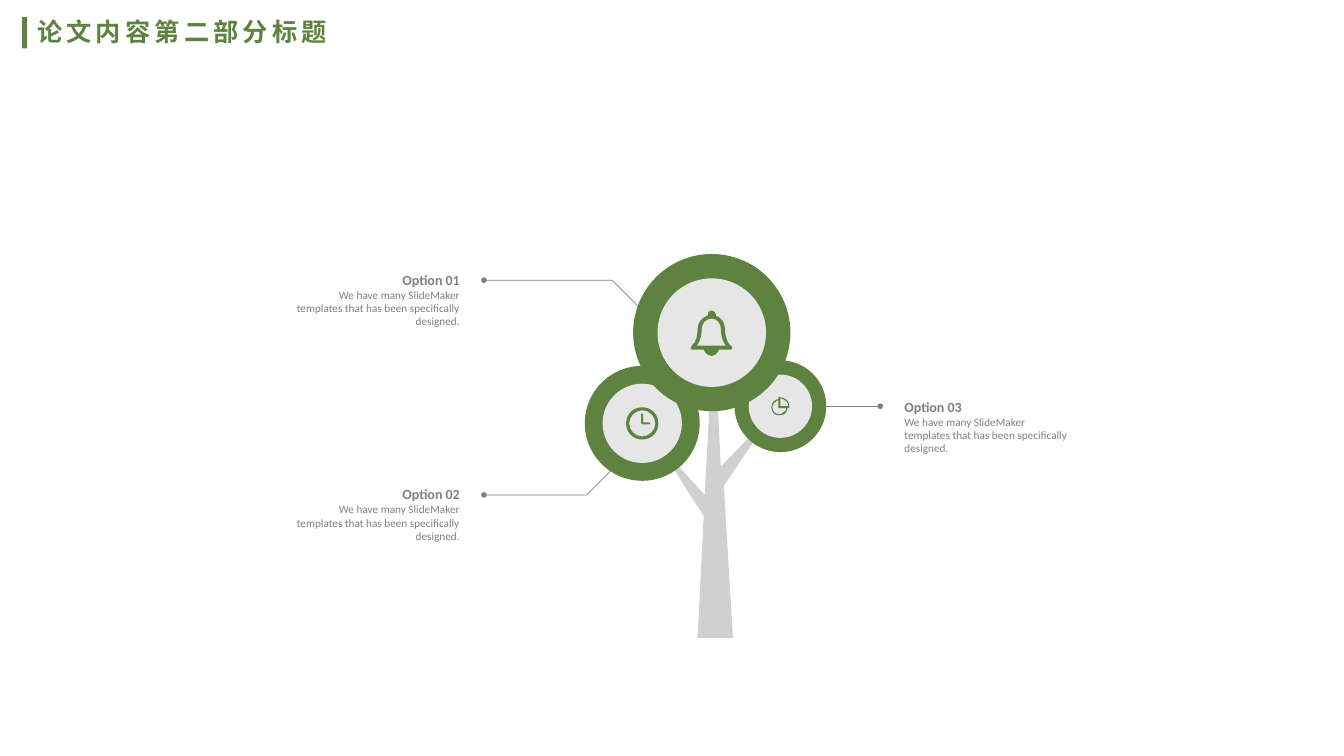
from dataclasses import dataclass

from lxml import etree
from pptx import Presentation, util as u
from pptx.dml import color
from pptx.enum import shapes, text
from pptx.oxml import ns

# A step is a point (x, y) or a Bezier curve (x1, y1, x2, y2, x, y).
Contour = list[tuple[float, ...]]


@dataclass(frozen=True)
class Theme:
    green: color.RGBColor = color.RGBColor(0x5E, 0x82, 0x40)
    pale: color.RGBColor = color.RGBColor(0xE7, 0xE6, 0xE6)
    gray: color.RGBColor = color.RGBColor(0x80, 0x80, 0x80)
    trunk: color.RGBColor = color.RGBColor(0x18, 0x17, 0x17)
    trunk_opacity: int = 20
    font: str = "Calibri"
    title_size: int = 18
    heading_size: int = 10
    body_size: int = 8
    line_width: float = 0.5


@dataclass(frozen=True)
class Option:
    heading: str
    left: float
    top: float
    align: text.PP_ALIGN


@dataclass(frozen=True)
class Crown:
    x: float
    y: float
    diameter: float


THEME = Theme()
RING_RATIO = 0.69
BODY = "We have many SlideMaker templates that has been specifically designed."
OPTIONS = [
    Option("Option 02", 2.91, 4.82, text.PP_ALIGN.RIGHT),
    Option("Option 01", 2.91, 2.69, text.PP_ALIGN.RIGHT),
    Option("Option 03", 8.97, 3.95, text.PP_ALIGN.LEFT),
]
LEADERS: list[Contour] = [
    [(6.37, 3.08), (6.07, 2.78), (4.8, 2.78)],
    [(6.1, 4.63), (5.82, 4.91), (4.8, 4.91)],
]
TRUNK: Contour = [
    (6.92, 6.33), (7.27, 6.33), (7.18, 4.82), (7.67, 4.09), (7.15, 4.63),
    (7.08, 3.24), (6.99, 4.91), (6.51, 4.38), (6.98, 5.12),
]
CROWNS = [Crown(7.74, 4.03, 0.91), Crown(6.37, 4.2, 1.14), Crown(7.06, 3.3, 1.56)]
PIE: list[Contour] = [
    [(7.83, 4.04), (7.83, 3.98, 7.79, 3.94, 7.73, 3.94), (7.72, 3.94),
     (7.72, 3.96), (7.68, 3.96, 7.65, 4, 7.65, 4.04),
     (7.65, 4.09, 7.68, 4.12, 7.73, 4.12),
     (7.75, 4.12, 7.76, 4.12, 7.78, 4.11),
     (7.8, 4.09, 7.81, 4.07, 7.81, 4.05), (7.83, 4.05)],
    [(7.77, 4.09), (7.76, 4.1, 7.74, 4.11, 7.73, 4.11),
     (7.69, 4.11, 7.66, 4.08, 7.66, 4.04),
     (7.66, 4.01, 7.69, 3.98, 7.72, 3.97), (7.72, 4.05), (7.8, 4.05),
     (7.8, 4.07, 7.79, 4.08, 7.77, 4.09)],
    [(7.74, 4.03), (7.74, 3.95), (7.78, 3.96, 7.82, 3.99, 7.82, 4.03)],
]
BELL: list[Contour] = [
    [(7.25, 3.43), (7.19, 3.39, 7.19, 3.26, 7.19, 3.26),
     (7.19, 3.2, 7.15, 3.15, 7.1, 3.13), (7.1, 3.12),
     (7.1, 3.1, 7.08, 3.08, 7.06, 3.08),
     (7.03, 3.08, 7.02, 3.1, 7.02, 3.12), (7.02, 3.13),
     (6.96, 3.15, 6.92, 3.2, 6.92, 3.26),
     (6.92, 3.3, 6.91, 3.4, 6.86, 3.43),
     (6.85, 3.44, 6.85, 3.45, 6.85, 3.46),
     (6.85, 3.46, 6.86, 3.47, 6.87, 3.47), (6.98, 3.47),
     (6.99, 3.5, 7.02, 3.53, 7.06, 3.53),
     (7.09, 3.53, 7.12, 3.5, 7.13, 3.47), (7.24, 3.47),
     (7.25, 3.47, 7.26, 3.46, 7.26, 3.46),
     (7.27, 3.45, 7.26, 3.44, 7.25, 3.43)],
    [(6.91, 3.43), (6.96, 3.37, 6.96, 3.27, 6.96, 3.26),
     (6.96, 3.21, 7, 3.16, 7.06, 3.16),
     (7.11, 3.16, 7.15, 3.21, 7.15, 3.26),
     (7.15, 3.27, 7.15, 3.37, 7.2, 3.43)],
]
CLOCK_RING: list[Contour] = [
    [(6.37, 4.36), (6.28, 4.36, 6.21, 4.29, 6.21, 4.2),
     (6.21, 4.11, 6.28, 4.04, 6.37, 4.04),
     (6.46, 4.04, 6.53, 4.11, 6.53, 4.2),
     (6.53, 4.29, 6.46, 4.36, 6.37, 4.36)],
    [(6.37, 4.07), (6.3, 4.07, 6.24, 4.13, 6.24, 4.2),
     (6.24, 4.27, 6.3, 4.33, 6.37, 4.33),
     (6.44, 4.33, 6.5, 4.27, 6.5, 4.2),
     (6.5, 4.13, 6.44, 4.07, 6.37, 4.07)],
]
CLOCK_HANDS: list[Contour] = [
    [(6.44, 4.21), (6.37, 4.21), (6.36, 4.21, 6.36, 4.21, 6.36, 4.2),
     (6.36, 4.11), (6.36, 4.11, 6.36, 4.1, 6.37, 4.1),
     (6.38, 4.1, 6.38, 4.11, 6.38, 4.11), (6.38, 4.19), (6.44, 4.19),
     (6.45, 4.19, 6.45, 4.19, 6.45, 4.2),
     (6.45, 4.21, 6.45, 4.21, 6.44, 4.21)],
]


def paint(shape, fill: color.RGBColor) -> None:
    shape.shadow.inherit = False
    shape.fill.solid()
    shape.fill.fore_color.rgb = fill
    shape.line.fill.background()


def add_preset(slide, kind, left: float, top: float, width: float,
               height: float, fill: color.RGBColor) -> None:
    box = map(u.Inches, (left, top, width, height))
    paint(slide.shapes.add_shape(kind, *box), fill)


def trace(slide, contours: list[Contour], close: bool = True):
    """Build a freeform, then bend each run of three control points into a curve."""
    builder = None
    for start, *steps in contours:
        corner = [u.Inches(value) for value in start]
        if builder is None:
            builder = slide.shapes.build_freeform(*corner)
        else:
            builder.move_to(*corner)
        points = [(u.Inches(step[i]), u.Inches(step[i + 1]))
                  for step in steps for i in range(0, len(step), 2)]
        builder.add_line_segments(points, close=close)
    outline = builder.convert_to_shape()
    segments = iter(outline._element.findall(".//" + ns.qn("a:lnTo")))
    for _, *steps in contours:
        for step in steps:
            segment = next(segments)
            if len(step) == 6:
                segment.tag = ns.qn("a:cubicBezTo")
                for _ in range(2):
                    control = next(segments)
                    segment.append(control[0])
                    control.getparent().remove(control)
    return outline


def add_solid(slide, contours: list[Contour], fill: color.RGBColor):
    solid = trace(slide, contours)
    paint(solid, fill)
    return solid


def style_leader(leader) -> None:
    """Give a leader a thin gray line ending in a small dot."""
    leader.line.color.rgb = THEME.gray
    leader.line.width = u.Pt(THEME.line_width)
    etree.SubElement(leader.line._get_or_add_ln(), ns.qn("a:tailEnd"),
                     type="oval", w="sm", len="sm")


def add_run(paragraph, words: str, *, size: int, ink: color.RGBColor,
            bold: bool = False, spacing: int = 0) -> None:
    run = paragraph.add_run()
    run.text = words
    run.font.name = THEME.font
    run.font.size = u.Pt(size)
    run.font.bold = bold
    run.font.color.rgb = ink
    if spacing:
        run.font._element.set("spc", str(spacing * 100))


def add_option(slide, option: Option) -> None:
    box = map(u.Inches, (option.left, option.top, 1.65, 0.57))
    frame = slide.shapes.add_textbox(*box).text_frame
    frame.word_wrap = True
    frame.auto_size = text.MSO_AUTO_SIZE.SHAPE_TO_FIT_TEXT
    frame.margin_left = frame.margin_right = 0
    frame.margin_top = frame.margin_bottom = 0
    heading, body = frame.paragraphs[0], frame.add_paragraph()
    heading.alignment = body.alignment = option.align
    add_run(heading, option.heading, size=THEME.heading_size, ink=THEME.gray, bold=True)
    add_run(body, BODY, size=THEME.body_size, ink=THEME.gray)


def add_leaders(slide) -> None:
    for points in LEADERS:
        bent = trace(slide, [points], close=False)
        bent.shadow.inherit = False
        bent.fill.background()
        style_leader(bent)
    ends = map(u.Inches, (8.14, 4.03, 8.73, 4.03))
    straight = slide.shapes.add_connector(shapes.MSO_CONNECTOR.STRAIGHT, *ends)
    style_leader(straight)
    etree.SubElement(straight._element.spPr, ns.qn("a:effectLst"))


def add_tree(slide) -> None:
    trunk = add_solid(slide, [TRUNK], THEME.trunk)
    tint = trunk._element.spPr.find(".//" + ns.qn("a:srgbClr"))
    etree.SubElement(tint, ns.qn("a:alpha"), val=str(THEME.trunk_opacity * 1000))
    for crown in CROWNS:
        for size, fill in ((crown.diameter, THEME.green),
                           (crown.diameter * RING_RATIO, THEME.pale)):
            add_preset(slide, shapes.MSO_SHAPE.OVAL, crown.x - size / 2,
                       crown.y - size / 2, size, size, fill)
    for icon in (PIE, BELL, CLOCK_RING, CLOCK_HANDS):
        add_solid(slide, icon, THEME.green)


def add_title(slide) -> None:
    box = map(u.Inches, (0.27, 0.11, 3.13, 0.4))
    frame = slide.shapes.add_textbox(*box).text_frame
    frame.word_wrap = False
    frame.auto_size = text.MSO_AUTO_SIZE.SHAPE_TO_FIT_TEXT
    add_run(frame.paragraphs[0], "论文内容第二部分标题", size=THEME.title_size,
            ink=THEME.green, bold=True, spacing=3)
    add_preset(slide, shapes.MSO_SHAPE.RECTANGLE, 0.22, 0.17, 0.05, 0.31, THEME.green)


def main() -> None:
    deck = Presentation()
    deck.slide_width, deck.slide_height = u.Inches(13.33), u.Inches(7.5)
    slide = deck.slides.add_slide(deck.slide_layouts[6])
    for option in OPTIONS:
        add_option(slide, option)
    add_leaders(slide)
    add_tree(slide)
    add_title(slide)
    deck.save("out.pptx")


if __name__ == "__main__":
    main()
